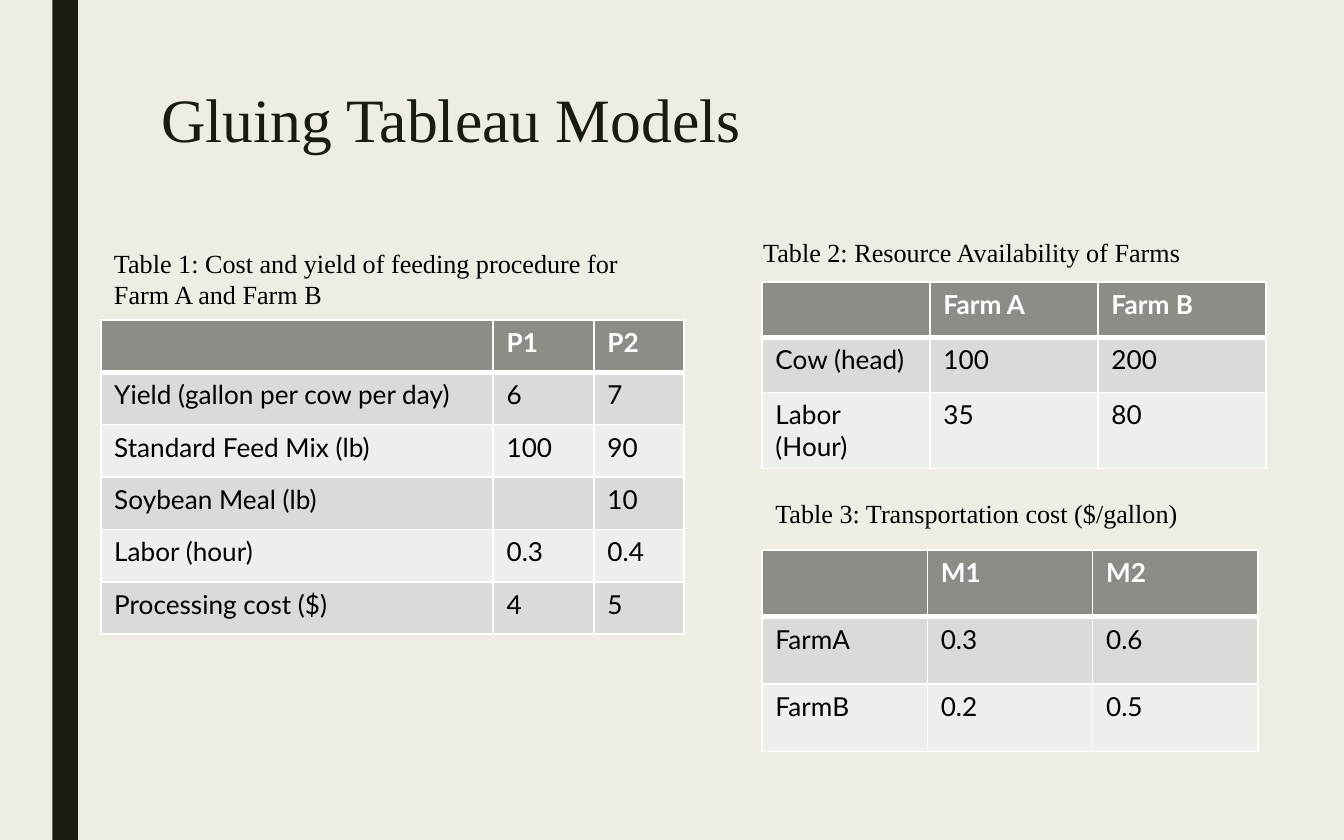
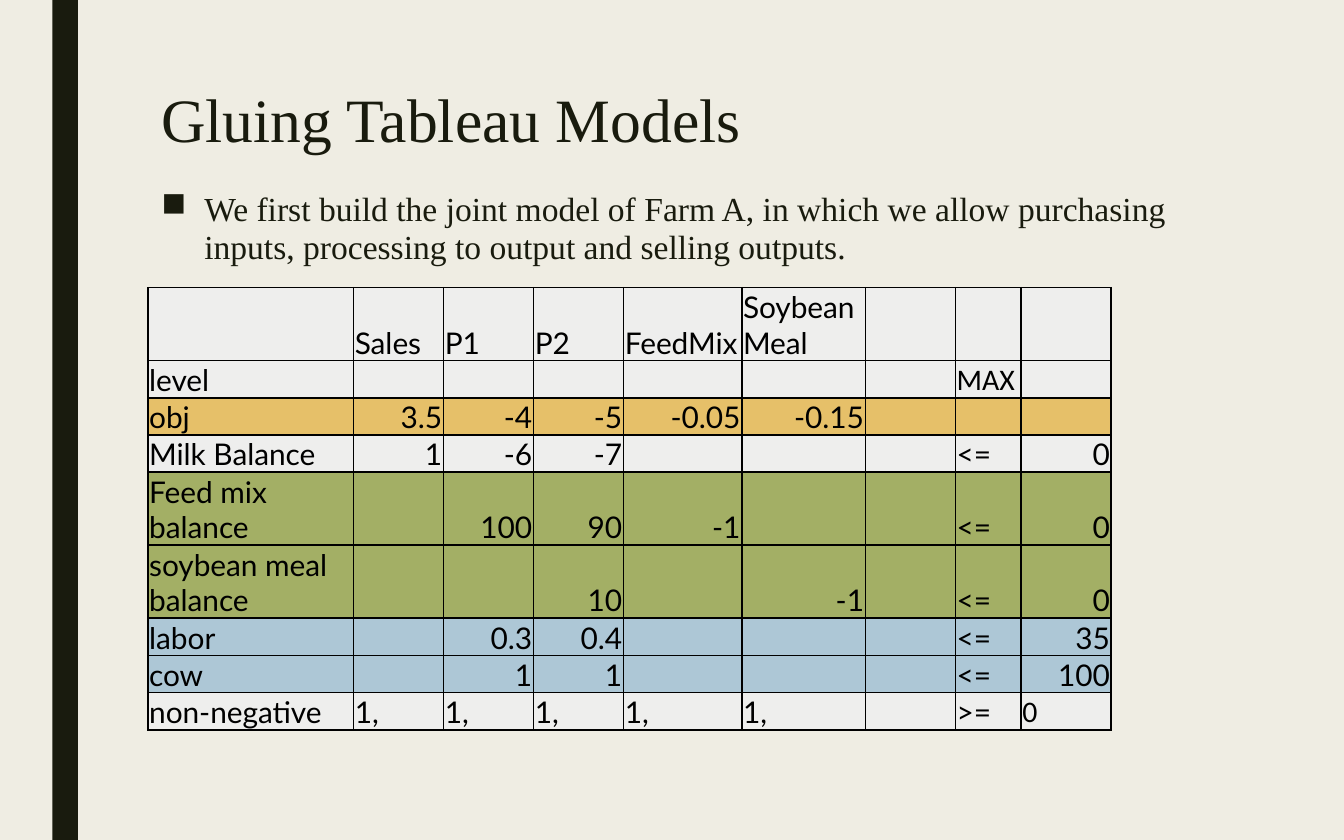
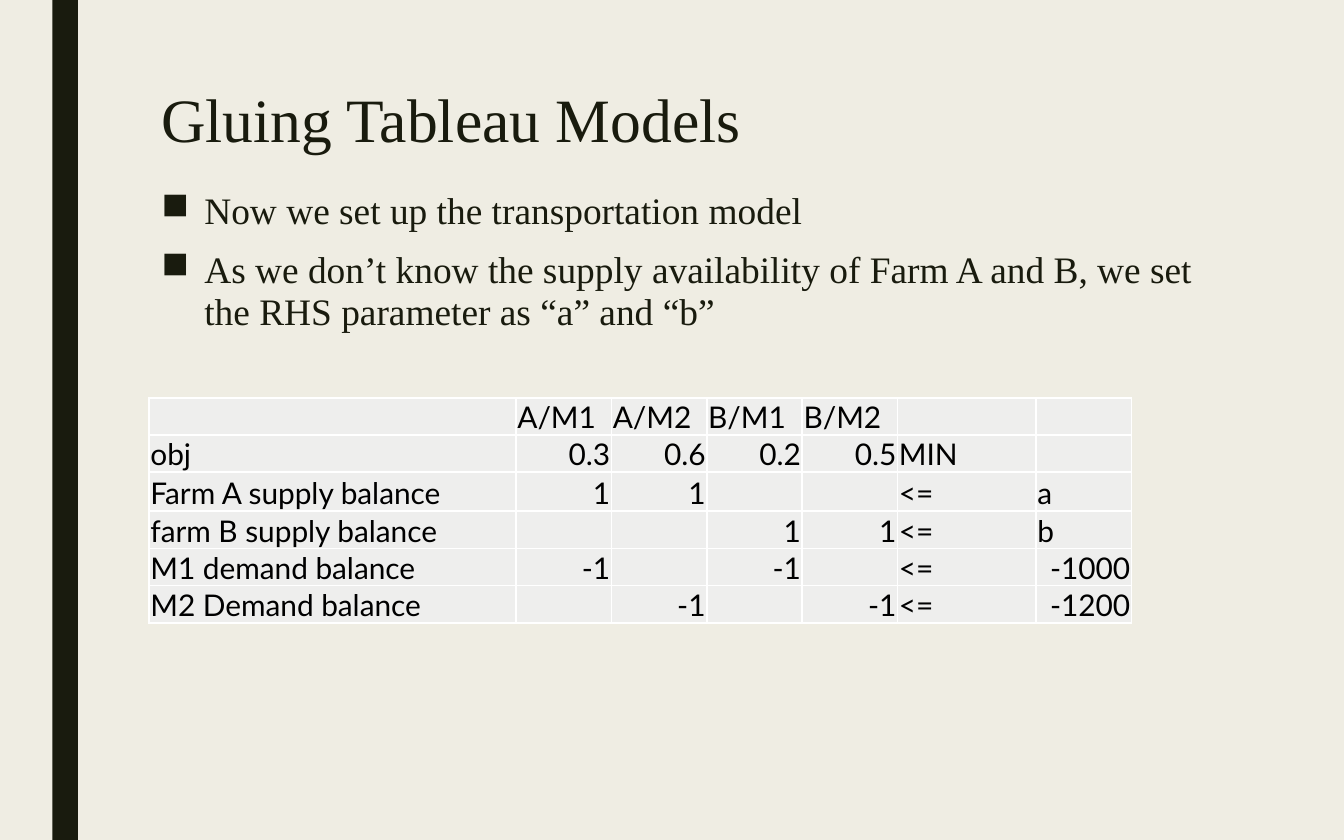
from lxml.etree import SubElement
from pptx import Presentation
from pptx.dml.color import RGBColor
from pptx.enum.shapes import MSO_SHAPE
from pptx.enum.text import MSO_ANCHOR, PP_ALIGN
from pptx.oxml.ns import qn
from pptx.util import Inches, Pt

INK, PAPER, BLACK, WHITE = "191B0E", "EFEDE3", "000000", "FFFFFF"
HEADER, BAND_DARK, BAND_LIGHT = "8C8D86", "DADBD9", "EEEEED"
GOLD, GREEN, BLUE = "E6C069", "A3AF65", "ADC7D6"
SERIF, SANS, SHEET_FONT = "Times New Roman", "Lato", "Calibri"


def color(value):
    return RGBColor.from_string(value)


def is_number(text):
    return text.lstrip("-").replace(".", "", 1).isdigit()


def add_run(paragraph, text, size, font, ink, bold=False):
    run = paragraph.add_run()
    run.text = text
    run.font.size = Pt(size)
    run.font.name = font
    run.font.bold = bold
    run.font.color.rgb = color(ink)


def set_borders(cell, ink, top=1, bottom=1):
    properties = cell._tc.get_or_add_tcPr()
    for side, width in (("L", 1), ("R", 1), ("T", top), ("B", bottom)):
        line = SubElement(properties, qn(f"a:ln{side}"), w=str(Pt(width)))
        fill = SubElement(line, qn("a:solidFill"))
        SubElement(fill, qn("a:srgbClr"), val=ink)


def set_bullet(paragraph, indent):
    properties = paragraph._p.get_or_add_pPr()
    properties.set("marL", str(indent))
    properties.set("indent", str(-indent))
    SubElement(properties, qn("a:buChar"), char="■")


class Deck:
    """Holds the shared style and the slide being filled."""

    def __init__(self):
        self.presentation = Presentation()
        self.presentation.slide_width = Inches(10)
        self.presentation.slide_height = Inches(6.25)
        self.slide = None

    def new_slide(self, title):
        self.slide = self.presentation.slides.add_slide(self.presentation.slide_layouts[6])
        background = self.slide.background.fill
        background.solid()
        background.fore_color.rgb = color(PAPER)
        self.side_band()
        frame = self.text_frame(1.12, 0.63, 7.88, 0.67, (0.08, 0.04))
        paragraph = frame.paragraphs[0]
        paragraph.line_spacing = 0.89
        add_run(paragraph, title, 33, SERIF, INK)

    def side_band(self):
        shape = self.slide.shapes.add_shape(
            MSO_SHAPE.RECTANGLE, Inches(0.39), 0, Inches(0.19), self.presentation.slide_height)
        shape.shadow.inherit = False
        shape.fill.solid()
        shape.fill.fore_color.rgb = color(INK)
        shape.line.fill.background()

    def text_frame(self, left, top, width, height, insets=(0.1, 0.05)):
        box = self.slide.shapes.add_textbox(
            Inches(left), Inches(top), Inches(width), Inches(height))
        frame = box.text_frame
        frame.word_wrap = True
        frame.margin_left = frame.margin_right = Inches(insets[0])
        frame.margin_top = frame.margin_bottom = Inches(insets[1])
        return frame

    def caption(self, text, left, top, width, height=0.34):
        frame = self.text_frame(left, top, width, height)
        add_run(frame.paragraphs[0], text, 14, SERIF, BLACK)

    def bullets(self, texts, size):
        frame = self.text_frame(1.12, 1.38, 7.88, 3.97, (0.08, 0.04))
        for index, text in enumerate(texts):
            paragraph = frame.add_paragraph() if index else frame.paragraphs[0]
            paragraph.line_spacing = 0.94
            paragraph.space_before = Pt(7.5)
            paragraph.space_after = Pt(1.5)
            set_bullet(paragraph, Inches(0.32))
            add_run(paragraph, text, size, SERIF, INK)

    def table(self, rows, left, top, columns, heights):
        table = self.slide.shapes.add_table(
            len(rows), len(columns), Inches(left), Inches(top),
            Inches(sum(columns)), Inches(sum(heights))).table
        table.first_row = table.horz_banding = False
        for column, width in zip(table.columns, columns):
            column.width = Inches(width)
        for row, height in zip(table.rows, heights):
            row.height = Inches(height)
        return table

    def write_cell(self, cell, text, size, fill, font=SANS, ink=BLACK, bold=False):
        cell.fill.solid()
        cell.fill.fore_color.rgb = color(fill)
        paragraph = cell.text_frame.paragraphs[0]
        if text:
            add_run(paragraph, text, size, font, ink, bold)
        else:
            # An empty cell still takes its line height from this size.
            SubElement(paragraph._p, qn("a:endParaRPr"), sz=str(size * 100))
        return paragraph

    def banded_table(self, rows, left, top, columns, row_height):
        table = self.table(rows, left, top, columns, [row_height] * len(rows))
        for r, row in enumerate(rows):
            fill = HEADER if r == 0 else BAND_DARK if r % 2 else BAND_LIGHT
            for c, text in enumerate(row):
                cell = table.cell(r, c)
                set_borders(cell, WHITE, top=3 if r == 1 else 1, bottom=3 if r == 0 else 1)
                self.write_cell(cell, text, 14, fill, ink=BLACK if r else WHITE, bold=r == 0)

    def tableau(self, rows, left, top, columns, heights, border,
                fills=None, fonts=None, left_rows=()):
        """Spreadsheet-like grid; numbers go right except in left_rows."""
        fills, fonts = fills or {}, fonts or {}
        table = self.table(rows, left, top, columns, heights)
        for r, row in enumerate(rows):
            for c, text in enumerate(row):
                cell = table.cell(r, c)
                set_borders(cell, border)
                cell.margin_left = cell.margin_right = cell.margin_top = Inches(0.01)
                cell.margin_bottom = 0
                cell.vertical_anchor = MSO_ANCHOR.BOTTOM
                paragraph = self.write_cell(cell, text, 16, fills.get(row[0], BAND_LIGHT),
                                            fonts.get((r, c), SANS))
                if is_number(text) and row[0] not in left_rows:
                    paragraph.alignment = PP_ALIGN.RIGHT


def farm_data_slide(deck):
    deck.new_slide("Gluing Tableau Models")
    deck.banded_table([
        ("", "P1", "P2"),
        ("Yield (gallon per cow per day)", "6", "7"),
        ("Standard Feed Mix (lb)", "100", "90"),
        ("Soybean Meal (lb)", "", "10"),
        ("Labor (hour)", "0.3", "0.4"),
        ("Processing cost ($)", "4", "5"),
    ], 0.75, 2.38, (2.92, 0.75, 0.67), 0.39)
    deck.caption("Table 1: Cost and yield of feeding procedure for Farm A and Farm B",
                 0.75, 1.79, 4.33, 0.57)
    deck.banded_table([
        ("", "Farm A", "Farm B"),
        ("Cow (head)", "100", "200"),
        ("Labor (Hour)", "35", "80"),
    ], 5.67, 2.1, [1.25] * 3, 0.41)
    deck.caption("Table 2: Resource Availability of Farms", 5.58, 1.71, 3.42)
    deck.banded_table([
        ("", "M1", "M2"),
        ("FarmA", "0.3", "0.6"),
        ("FarmB", "0.2", "0.5"),
    ], 5.67, 4.09, [1.23] * 3, 0.5)
    deck.caption("Table 3: Transportation cost ($/gallon)", 5.67, 3.65, 3.42)


def joint_model_slide(deck):
    deck.new_slide("Gluing Tableau Models")
    deck.bullets(["We first build the joint model of Farm A, in which we allow purchasing "
                  "inputs, processing to output and selling outputs."], 18)
    rows = [
        ("", "Sales", "P1", "P2", "FeedMix", "Soybean Meal", "", "", ""),
        ("level", "", "", "", "", "", "", "MAX", ""),
        ("obj", "3.5", "-4", "-5", "-0.05", "-0.15", "", "", ""),
        ("Milk Balance", "1", "-6", "-7", "", "", "", "<=", "0"),
        ("Feed mix balance", "", "100", "90", "-1", "", "", "<=", "0"),
        ("soybean meal balance", "", "", "10", "", "-1", "", "<=", "0"),
        ("labor", "", "0.3", "0.4", "", "", "", "<=", "35"),
        ("cow", "", "1", "1", "", "", "", "<=", "100"),
        ("non-negative", "1,", "1,", "1,", "1,", "1,", "", ">=", "0"),
    ]
    deck.tableau(
        rows, 1.1, 2.14, (1.53, 0.67, 0.67, 0.67, 0.88, 0.92, 0.67, 0.49, 0.67),
        [0.21] * len(rows), BLACK,
        fills={"obj": GOLD, "Feed mix balance": GREEN, "soybean meal balance": GREEN,
               "labor": BLUE, "cow": BLUE},
        fonts={(1, 7): SHEET_FONT, (8, 8): SHEET_FONT},
        left_rows=("non-negative",))


def transportation_slide(deck):
    deck.new_slide("Gluing Tableau Models")
    deck.bullets(["Now we set up the transportation model",
                  "As we don’t know the supply availability of Farm A and B, "
                  "we set the RHS parameter as “a” and “b”"], 20)
    deck.tableau([
        ("", "A/M1", "A/M2", "B/M1", "B/M2", "", ""),
        ("obj", "0.3", "0.6", "0.2", "0.5", "MIN", ""),
        ("Farm A supply balance", "1", "1", "", "", "<=", "a"),
        ("farm B supply balance", "", "", "1", "1", "<=", "b"),
        ("M1 demand balance", "-1", "", "-1", "", "<=", "-1000"),
        ("M2 Demand balance", "", "-1", "", "-1", "<=", "-1200"),
    ], 1.11, 2.96, (2.73, 0.71, 0.71, 0.71, 0.71, 1.03, 0.71),
        (0.2, 0.2, 0.29, 0.2, 0.2, 0.2), WHITE)


def main():
    deck = Deck()
    farm_data_slide(deck)
    joint_model_slide(deck)
    transportation_slide(deck)
    deck.presentation.save("out.pptx")


if __name__ == "__main__":
    main()
